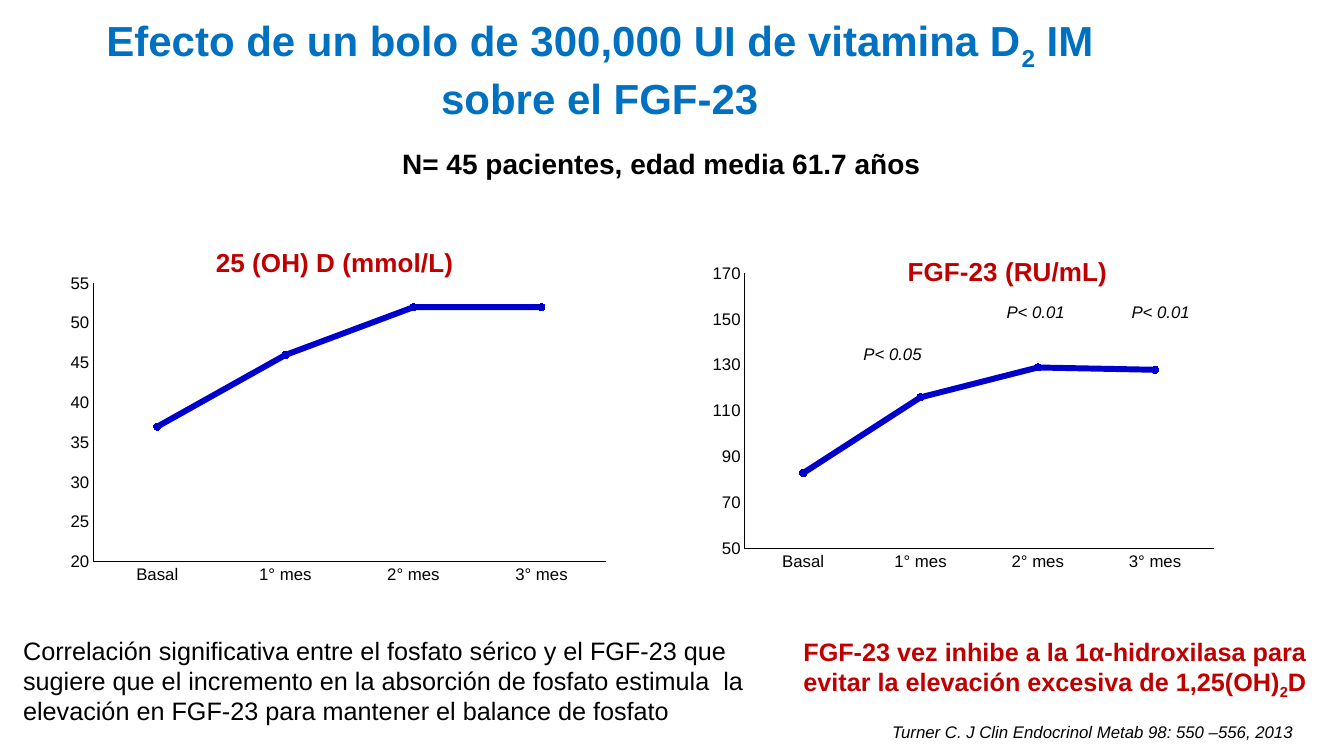
"""Builds the slide on the effect of a vitamin D2 bolus on FGF-23."""
from dataclasses import dataclass
from typing import Optional, Union

from lxml.etree import SubElement
from pptx import Presentation
from pptx.chart.axis import CategoryAxis, ValueAxis
from pptx.chart.data import CategoryChartData as ChartData
from pptx.dml.color import RGBColor
from pptx.enum.chart import XL_CHART_TYPE as ChartType
from pptx.enum.chart import XL_MARKER_STYLE as MarkerStyle
from pptx.enum.chart import XL_TICK_MARK as TickMark
from pptx.enum.text import MSO_AUTO_SIZE as AutoSize
from pptx.enum.text import PP_ALIGN as Align
from pptx.oxml.ns import qn
from pptx.slide import Slide
from pptx.util import Inches, Pt

SLIDE_WIDTH = Inches(13.33)
SLIDE_HEIGHT = Inches(7.5)
FONT = "Arial"
BLACK = RGBColor(0x00, 0x00, 0x00)
TITLE_BLUE = RGBColor(0x00, 0x70, 0xC0)
LINE_BLUE = RGBColor(0x00, 0x00, 0xCC)
RED = RGBColor(0xC0, 0x00, 0x00)
MONTHS = ("Basal", "1° mes", "2° mes", "3° mes")


@dataclass(frozen=True)
class Area:
    """A rectangle in percent of the slide's width and height."""
    left: float
    top: float
    width: float
    height: float

    def lengths(self) -> tuple[int, int, int, int]:
        """Returns the rectangle in slide units."""
        return (int(SLIDE_WIDTH * self.left / 100), int(SLIDE_HEIGHT * self.top / 100),
                int(SLIDE_WIDTH * self.width / 100), int(SLIDE_HEIGHT * self.height / 100))


@dataclass(frozen=True)
class Label:
    """A text whose every second piece is a subscript."""
    area: Area
    pieces: tuple[str, ...]
    size: int
    color: RGBColor = BLACK
    bold: bool = False
    italic: bool = False
    wrap: bool = True
    align: Align = Align.LEFT


@dataclass(frozen=True)
class LinePlot:
    """A line chart of one marker over the months."""
    area: Area
    title: str
    values: tuple[int, ...]
    minimum: int
    maximum: int
    step: int
    plot_area: tuple[float, float, float, float]
    title_place: Optional[tuple[float, float]] = None


def p_value(left: float, top: float, limit: str) -> Label:
    """Describes a significance mark above a point."""
    return Label(Area(left, top, 5.87, 4), (f"P< {limit}",), 12, italic=True, wrap=False)


PLOTS = (
    LinePlot(Area(3, 30, 43.81, 57.6), "25 (OH) D (mmol/L)", (37, 46, 52, 52),
             20, 55, 5, (0.09, 0.13, 0.87, 0.64)),
    LinePlot(Area(50.94, 30.27, 40.59, 53.6), "FGF-23 (RU/mL)", (83, 116, 129, 128),
             50, 170, 20, (0.11, 0.11, 0.86, 0.68), (0.4, 0.05)),
)
LABELS = (
    Label(Area(65.64, 94.8, 33.08, 4),
          ("Turner C. J Clin Endocrinol Metab 98: 550 –556, 2013",), 12, italic=True),
    p_value(63.5, 44.8, "0.05"),
    p_value(74.15, 39.2, "0.01"),
    p_value(83.45, 39.2, "0.01"),
    Label(Area(3, 1.33, 83.27, 14.8),
          ("Efecto de un bolo de 300,000 UI de vitamina D", "2", " IM sobre el FGF-23"),
          30, TITLE_BLUE, bold=True, align=Align.CENTER),
    Label(Area(29.18, 18.67, 40.36, 5.87),
          ("N= 45 pacientes, edad media 61.7 años",), 20, bold=True, wrap=False),
    Label(Area(0.98, 83.33, 55.89, 13.47),
          ("Correlación significativa entre el fosfato sérico y el FGF-23 que sugiere que "
           "el incremento en la absorción de fosfato estimula  la elevación en FGF-23 "
           "para mantener el balance de fosfato",), 18),
    Label(Area(59.04, 83.47, 41.34, 9.47),
          ("FGF-23 vez inhibe a la 1α-hidroxilasa para evitar la elevación excesiva "
           "de 1,25(OH)", "2", "D"), 18, RED, bold=True),
)


def draw_label(slide: Slide, label: Label) -> None:
    """Draws a text box."""
    frame = slide.shapes.add_textbox(*label.area.lengths()).text_frame
    frame.word_wrap = label.wrap
    frame.auto_size = AutoSize.SHAPE_TO_FIT_TEXT
    paragraph = frame.paragraphs[0]
    paragraph.alignment = label.align
    for index, piece in enumerate(label.pieces):
        run = paragraph.add_run()
        run.text = piece
        run.font.name = FONT
        run.font.size = Pt(label.size)
        run.font.bold = label.bold
        run.font.italic = label.italic
        run.font.color.rgb = label.color
        if index % 2:
            run._r.get_or_add_rPr().set("baseline", "-25000")


def set_layout(parent, index: int, shares: dict[str, float], inner: bool = False) -> None:
    """Places a chart element at shares of the chart's size."""
    for old_layout in parent.findall(qn("c:layout")):
        parent.remove(old_layout)
    layout = SubElement(parent, qn("c:layout"))
    parent.insert(index, layout)
    manual = SubElement(layout, qn("c:manualLayout"))
    if inner:
        SubElement(manual, qn("c:layoutTarget")).set("val", "inner")
    for mode in ("xMode", "yMode"):
        SubElement(manual, qn(f"c:{mode}")).set("val", "edge")
    for name, share in shares.items():
        SubElement(manual, qn(f"c:{name}")).set("val", str(share))


def style_axis(axis: Union[CategoryAxis, ValueAxis]) -> None:
    """Gives an axis a thin black line and plain labels."""
    axis.has_major_gridlines = False
    axis.major_tick_mark = axis.minor_tick_mark = TickMark.NONE
    axis.format.line.color.rgb = BLACK
    axis.format.line.width = Pt(0.75)
    font = axis.tick_labels.font
    font.name, font.size, font.color.rgb = FONT, Pt(12), BLACK


def draw_plot(slide: Slide, plot: LinePlot) -> None:
    """Draws a line chart with its title."""
    data = ChartData()
    data.categories = MONTHS
    data.add_series("Series 1", plot.values)
    chart = slide.shapes.add_chart(ChartType.LINE_MARKERS, *plot.area.lengths(), data).chart
    chart.has_legend = False
    chart.font.name, chart.font.size, chart.font.color.rgb = FONT, Pt(10), BLACK
    style_axis(chart.category_axis)
    style_axis(chart.value_axis)
    chart.value_axis.minimum_scale = plot.minimum
    chart.value_axis.maximum_scale = plot.maximum
    chart.value_axis.major_unit = plot.step

    chart.plots[0].vary_by_categories = False
    series = chart.plots[0].series[0]
    series.smooth = False
    series.format.line.color.rgb = LINE_BLUE
    series.format.line.width = Pt(4.25)
    series.marker.style = MarkerStyle.CIRCLE
    series.marker.size = 5
    series.marker.format.fill.solid()
    series.marker.format.fill.fore_color.rgb = LINE_BLUE
    series.marker.format.line.color.rgb = LINE_BLUE

    chart.has_title = True
    title_frame = chart.chart_title.text_frame
    title_frame.text = plot.title
    font = title_frame.paragraphs[0].runs[0].font
    font.name, font.size, font.bold, font.color.rgb = FONT, Pt(18.6), True, RED
    chart_element = chart._chartSpace.chart
    set_layout(chart_element.plotArea, 0, dict(zip("xywh", plot.plot_area)), inner=True)
    if plot.title_place:
        set_layout(chart_element.find(qn("c:title")), 1, dict(zip("xy", plot.title_place)))


def main() -> None:
    """Builds and saves the presentation."""
    presentation = Presentation()
    presentation.slide_width = SLIDE_WIDTH
    presentation.slide_height = SLIDE_HEIGHT
    slide = presentation.slides.add_slide(presentation.slide_layouts[6])
    for plot in PLOTS:
        draw_plot(slide, plot)
    for label in LABELS:
        draw_label(slide, label)
    presentation.save("out.pptx")


if __name__ == "__main__":
    main()
